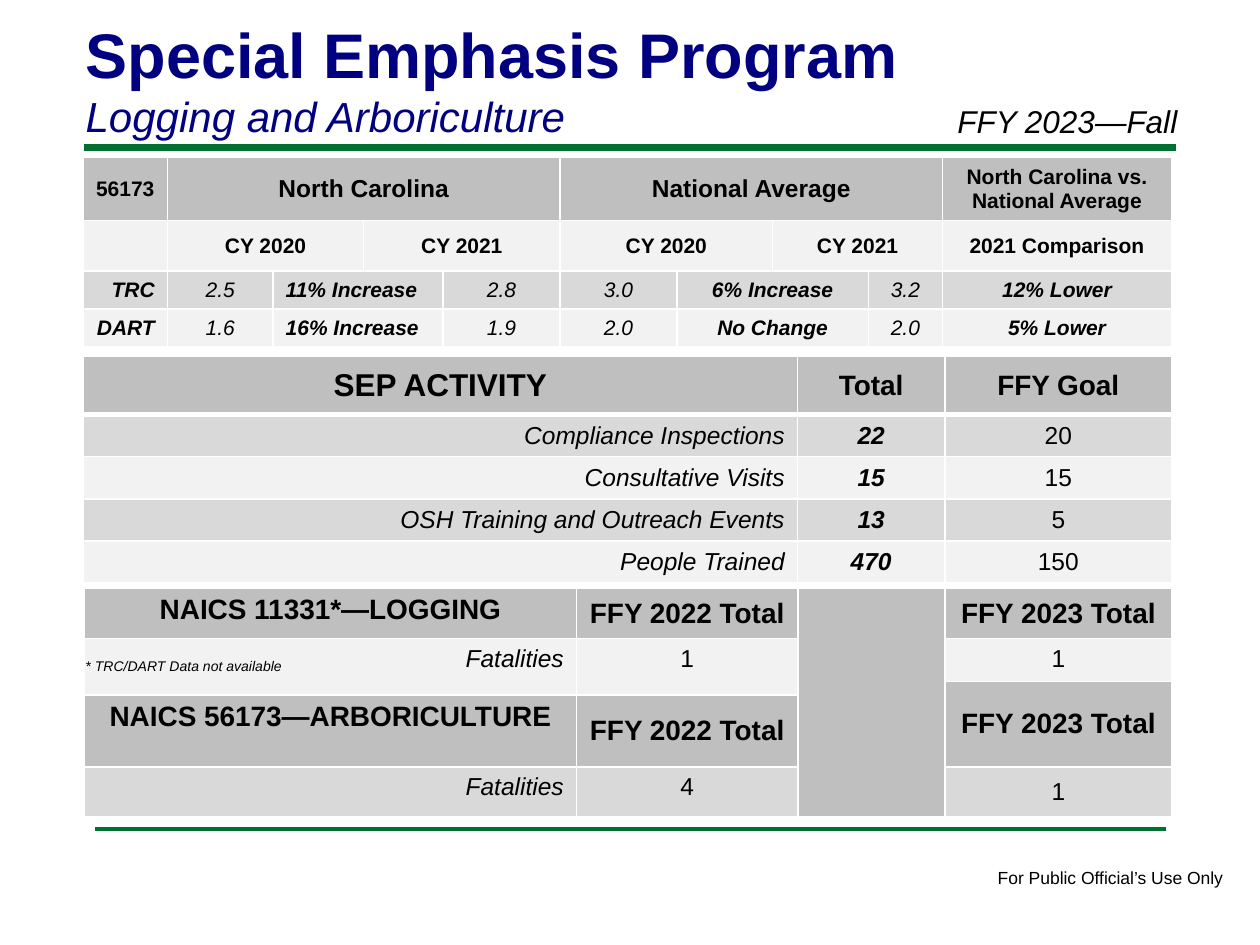
from lxml import etree
from pptx import Presentation
from pptx import util as u
from pptx.dml.color import RGBColor
from pptx.enum import shapes, text
from pptx.oxml import ns

WIDE, HIGH = u.Inches(10), u.Inches(7.5)
BLACK, WHITE, NAVY, GREEN = "000000", "FFFFFF", "000080", "007030"
DARK, MID, PALE = "BFBFBF", "D9D9D9", "F2F2F2"
ALIGN = {"l": text.PP_ALIGN.LEFT, "c": text.PP_ALIGN.CENTER,
         "r": text.PP_ALIGN.RIGHT}
TOP, MIDDLE = text.MSO_ANCHOR.TOP, text.MSO_ANCHOR.MIDDLE


def rgb(code):
    return RGBColor.from_string(code)


def box(x, y, w, h):
    """Turn percentages of the slide into lengths."""
    return [int(side * part / 100) for side, part in
            zip((WIDE, HIGH, WIDE, HIGH), (x, y, w, h))]


def style(para, size, look="", color=BLACK, align="l"):
    para.alignment = ALIGN[align]
    for run in para.runs:
        font = run.font
        font.name, font.size = "Arial", u.Pt(size)
        font.bold, font.italic = "b" in look, "i" in look
        font.color.rgb = rgb(color)


def title(slide, area):
    head = slide.shapes.title
    head.left, head.top, head.width, head.height = area
    frame = head.text_frame
    frame.auto_size = text.MSO_AUTO_SIZE.NONE
    frame.vertical_anchor = text.MSO_ANCHOR.BOTTOM
    frame.text = "Special Emphasis Program\nLogging and Arboriculture"
    for para, size, look in zip(frame.paragraphs, (36, 24), "bi"):
        para.space_before = u.Pt(0)
        style(para, size, look, NAVY)


def label(slide, area, words, size, look="", wrap=False):
    frame = slide.shapes.add_textbox(*area).text_frame
    frame.word_wrap = wrap
    frame.text = words
    style(frame.paragraphs[0], size, look)


def rule(slide, area, weight):
    x, y, w, h = area
    line = slide.shapes.add_connector(
        shapes.MSO_CONNECTOR.STRAIGHT, x, y, x + w, y + h)
    line.line.color.rgb = rgb(GREEN)
    line.line.width = u.Pt(weight)
    etree.SubElement(line._element.spPr, ns.qn("a:effectLst"))


def border(cell, top=1, bottom=1):
    props = cell._tc.get_or_add_tcPr()
    for spot, (side, weight) in enumerate(
            zip("LRTB", (1, 1, top, bottom))):
        edge = etree.Element(ns.qn("a:ln" + side), w=str(u.Pt(weight)))
        fill = etree.SubElement(edge, ns.qn("a:solidFill"))
        etree.SubElement(fill, ns.qn("a:srgbClr"), val=WHITE)
        props.insert(spot, edge)


def grid(slide, area, cols, rows, cells, fills, spans=(), rim=1):
    """Table of (words, size, look, align, anchor) cells; None is empty."""
    table = slide.shapes.add_table(len(rows), len(cols), *area).table
    table.first_row = table.horz_banding = False
    for col, share in zip(table.columns, cols):
        col.width = int(area[2] * share / sum(cols))
    for row, share in zip(table.rows, rows):
        row.height = int(area[3] * share / sum(rows))
    for r, line in enumerate(cells):
        for c, item in enumerate(line):
            cell = table.cell(r, c)
            cell.fill.solid()
            cell.fill.fore_color.rgb = rgb(fills[r])
            border(cell, rim if r == 1 else 1, rim if r == 0 else 1)
            if item:
                words, size, look, align, anchor = item
                cell.text = words
                cell.vertical_anchor = anchor
                style(cell.text_frame.paragraphs[0], size, look, align=align)
    for r, c, down, across in spans:
        table.cell(r, c).merge(table.cell(r + down - 1, c + across - 1))


def cell(words, size, look="", align="c", anchor=MIDDLE):
    return words, size, look, align, anchor


def rates(slide, area):
    def line(name, *parts):
        a, up, b, d, shift, e, gap = parts
        return [cell(name, 12, "bi", "r"), cell(a, 12, "i"),
                cell(up, 12, "bi", "l"), None, cell(b, 12, "i"),
                cell(d, 12, "i"), cell(shift, 12, "bi"), None,
                cell(e, 12, "i"), cell(gap, 12, "bi")]

    years = [cell("CY 2020", 12, "b"), None, cell("CY 2021", 12, "b"), None]
    cells = [
        [cell("56173", 12, "b"), cell("North Carolina", 14, "b"),
         None, None, None, cell("National Average", 14, "b"),
         None, None, None,
         cell("North Carolina vs. National Average", 12, "b")],
        [None, *years, *years, cell("2021 Comparison", 12, "b")],
        line("TRC", "2.5", "11% Increase", "2.8", "3.0", "6% Increase",
             "3.2", "12% Lower"),
        line("DART", "1.6", "16% Increase", "1.9", "2.0", "No Change",
             "2.0", "5% Lower")]
    spans = [(0, c, 1, 4) for c in (1, 5)]
    spans += [(1, c, 1, 2) for c in (1, 3, 5, 7)]
    spans += [(r, c, 1, 2) for r in (2, 3) for c in (2, 6)]
    cols = (0.67, 0.84, 0.72, 0.63, 0.93, 0.93, 0.76, 0.76, 0.59, 1.82)
    grid(slide, area, cols, (5, 4, 3, 3), cells,
         (DARK, PALE, MID, PALE), spans)


def activity(slide, area):
    data = [("Compliance Inspections", "22", "20"),
            ("Consultative Visits", "15", "15"),
            ("OSH Training and Outreach Events", "13", "5"),
            ("People Trained", "470", "150")]
    cells = [[cell("SEP ACTIVITY", 18, "b"), cell("Total", 16, "b"),
              cell("FFY Goal", 16, "b")]]
    cells += [[cell(name, 14, "i", "r"), cell(total, 14, "bi"),
               cell(goal, 14)] for name, total, goal in data]
    grid(slide, area, (5.67, 1.17, 1.8), (0.46, *[0.33] * 4), cells,
         (DARK, MID, PALE, MID, PALE), rim=3)


def deaths(slide, area):
    past, now = (cell(f"FFY {year} Total", 16, "b") for year in (2022, 2023))
    fatal = cell("Fatalities", 14, "i", "r", TOP)
    cells = [
        [cell("NAICS 11331*—LOGGING", 16, "b", "c", TOP), past, None, now],
        [fatal, cell("1", 14, anchor=TOP), None, cell("1", 14, anchor=TOP)],
        [None, None, None, now],
        [cell("NAICS 56173—ARBORICULTURE", 16, "b", "c", TOP),
         past, None, None],
        [fatal, cell("4", 14, anchor=TOP), None, cell("1", 14)]]
    spans = [(0, 2, 5, 1), (1, 0, 2, 1), (1, 1, 2, 1), (2, 3, 2, 1)]
    grid(slide, area, (3.91, 1.76, 1.17, 1.8), (0.4, 0.34, 0.11, 0.57, 0.37),
         cells, (DARK, PALE, DARK, DARK, MID), spans)


def main():
    deck = Presentation()
    deck.slide_width, deck.slide_height = WIDE, HIGH
    slide = deck.slides.add_slide(deck.slide_layouts[5])
    # Frame: rules and footer
    rule(slide, box(6.7, 15.6, 86.6, 0), 4)
    rule(slide, box(7.5, 87.73, 85, 0), 2)
    label(slide, box(78.2, 91.07, 20.1, 3.6),
          "For Public Official’s Use Only", 10)
    # Heading
    title(slide, box(5.8, 0.8, 82.5, 14.8))
    label(slide, box(75, 10.1, 25, 5.33), "FFY 2023—Fall", 18, "i", True)
    # Tables
    rates(slide, box(6.6, 16.67, 86.4, 20))
    activity(slide, box(6.6, 37.73, 86.4, 23.8))
    deaths(slide, box(6.7, 62.27, 86.3, 23.8))
    label(slide, box(5.8, 68.93, 17.8, 3.2),
          "* TRC/DART Data not available", 8, "i")
    deck.save("out.pptx")


if __name__ == "__main__":
    main()
